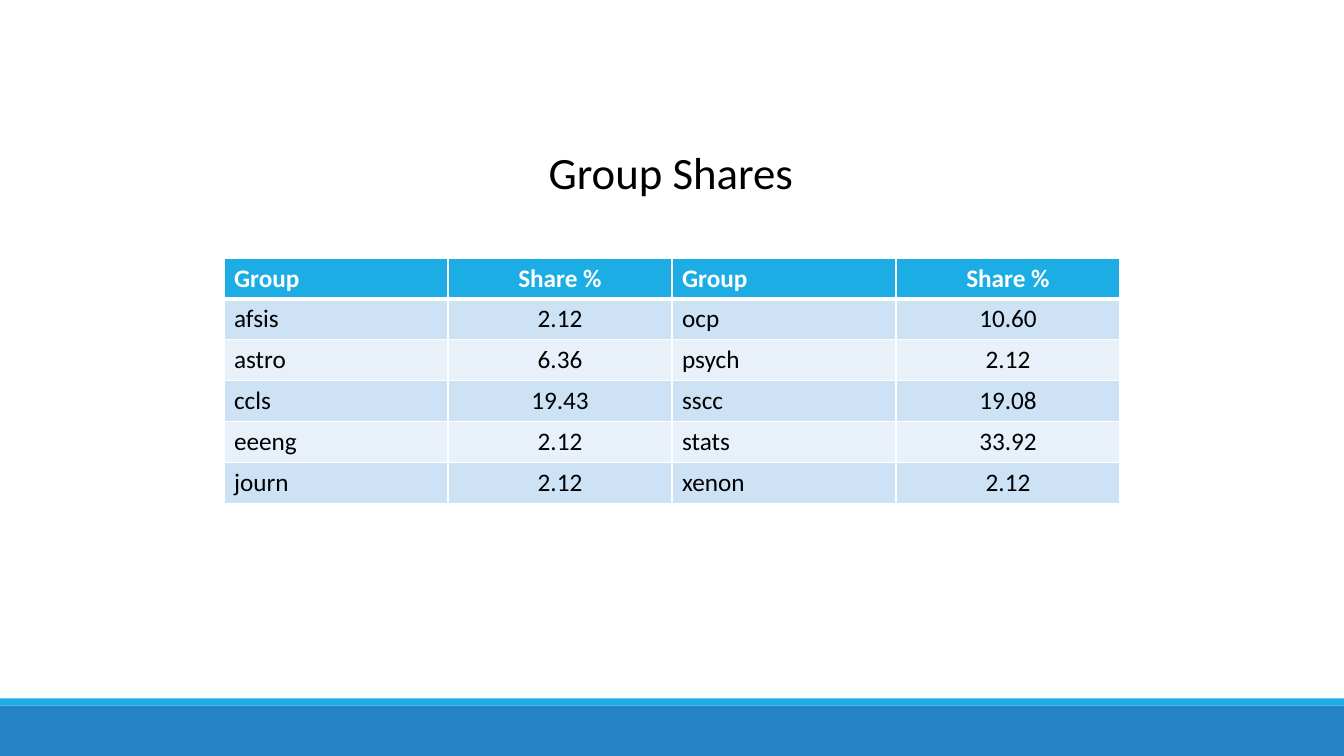
"""Build the Group Shares slide with its table and footer bars."""
import pptx
import pptx.util
import pptx.dml.color
import pptx.enum.shapes
import pptx.enum.text
import pptx.oxml

RGB = pptx.dml.color.RGBColor
WHITE = RGB(0xFF, 0xFF, 0xFF)
BLACK = RGB(0, 0, 0)
CYAN = RGB(0x1C, 0xAD, 0xE4)
BLUE = RGB(0x26, 0x83, 0xC6)
PALE = RGB(0xCD, 0xE3, 0xF5)
LIGHT = RGB(0xE8, 0xF1, 0xFA)

Inches, Pt = pptx.util.Inches, pptx.util.Pt
ALIGN = pptx.enum.text.PP_ALIGN
NS = "http://schemas.openxmlformats.org/drawingml/2006/main"


def style(para, size, color, bold, align):
    """Format one paragraph."""
    para.alignment = align
    look = {"name": "Calibri", "size": Pt(size), "bold": bold}
    for key, value in look.items():
        setattr(para.font, key, value)
    para.font.color.rgb = color


def edge(cell, side, width):
    """Add a white border to one side of a cell."""
    cell._tc.get_or_add_tcPr().append(pptx.oxml.parse_xml(
        f'<a:ln{side} xmlns:a="{NS}" w="{Pt(width)}"><a:solidFill>'
        f'<a:srgbClr val="{WHITE}"/></a:solidFill></a:ln{side}>'))


deck = pptx.Presentation()
deck.slide_width, deck.slide_height = Inches(13.33), Inches(7.5)
wide, high = deck.slide_width, deck.slide_height
slide = deck.slides.add_slide(deck.slide_layouts[5])

bars = [(7, 0.5, BLUE), (6.93, 0.07, CYAN)]
for top, tall, color in bars:
    bar = slide.shapes.add_shape(
        pptx.enum.shapes.MSO_SHAPE.RECTANGLE, 0, Inches(top), wide, Inches(tall))
    bar.shadow.inherit = False
    bar.fill.solid()
    bar.fill.fore_color.rgb = color
    bar.line.fill.background()

title = slide.shapes.title
place = {"left": Inches(0.18), "top": Inches(1.39),
         "width": Inches(12.95), "height": Inches(1.18)}
for key, value in place.items():
    setattr(title, key, value)
frame = title.text_frame
frame.text = "Group Shares"
frame.word_wrap = True
frame.auto_size = pptx.enum.text.MSO_AUTO_SIZE.NONE
frame.vertical_anchor = pptx.enum.text.MSO_ANCHOR.TOP
style(frame.paragraphs[0], 32, BLACK, False, ALIGN.CENTER)

rows = [
    ("Group", "Share %", "Group", "Share %"),
    ("afsis", "2.12", "ocp", "10.60"),
    ("astro", "6.36", "psych", "2.12"),
    ("ccls", "19.43", "sscc", "19.08"),
    ("eeeng", "2.12", "stats", "33.92"),
    ("journ", "2.12", "xenon", "2.12"),
]
col = wide // 6
table = slide.shapes.add_table(
    len(rows), 4, col, Inches(2.56), 4 * col, Inches(2.43)).table
for r, row in enumerate(rows):
    head = r == 0
    fill = CYAN if head else PALE if r % 2 else LIGHT
    for c, text in enumerate(row):
        cell = table.cell(r, c)
        cell.text = text
        style(cell.text_frame.paragraphs[0], 18, WHITE if head else BLACK,
              head, ALIGN.CENTER if c % 2 else ALIGN.LEFT)
        edges = {"L": 1, "R": 1, "T": 3 if r == 1 else 1, "B": 3 if head else 1}
        for side, width in edges.items():
            edge(cell, side, width)
        cell.fill.solid()
        cell.fill.fore_color.rgb = fill

deck.save("out.pptx")
